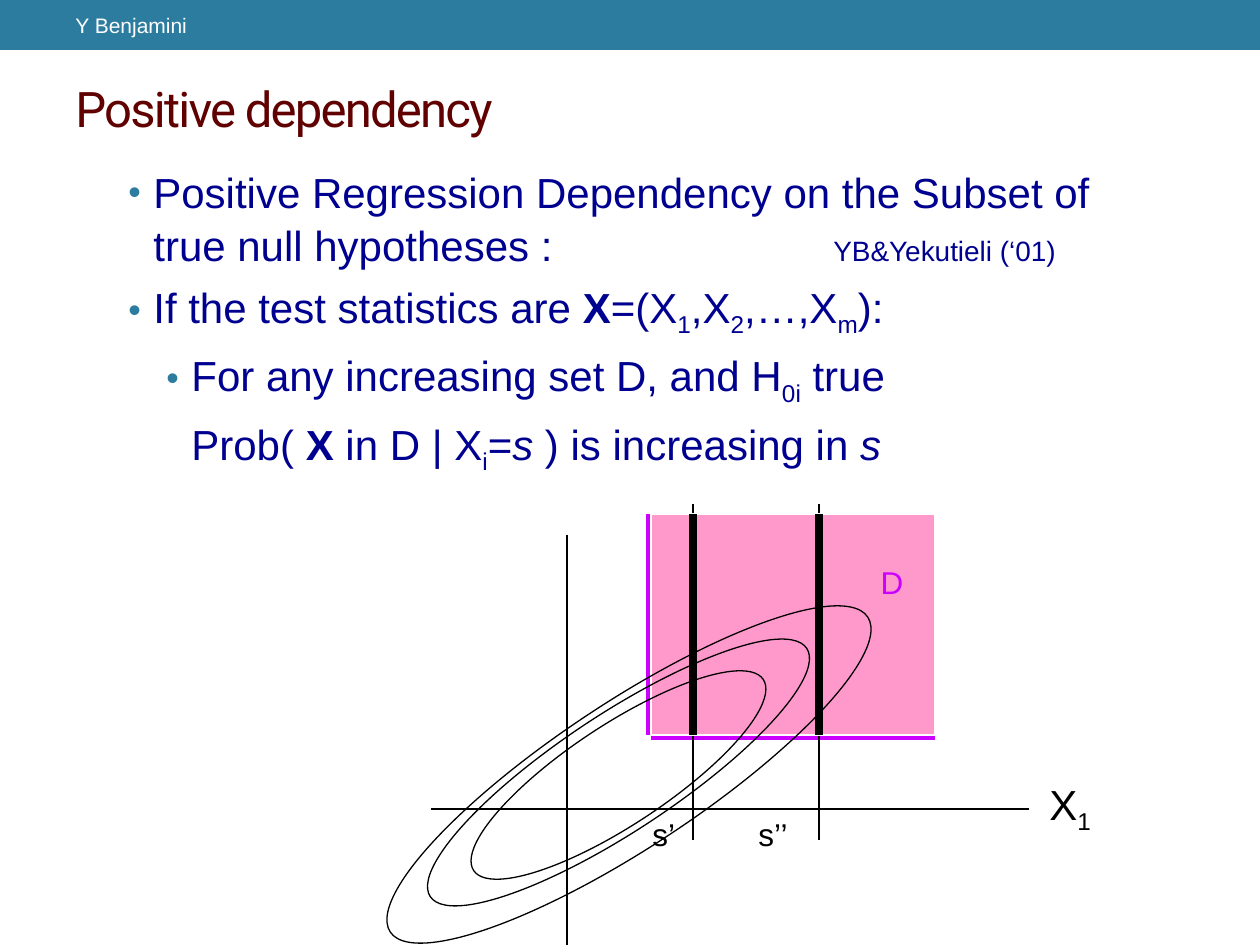
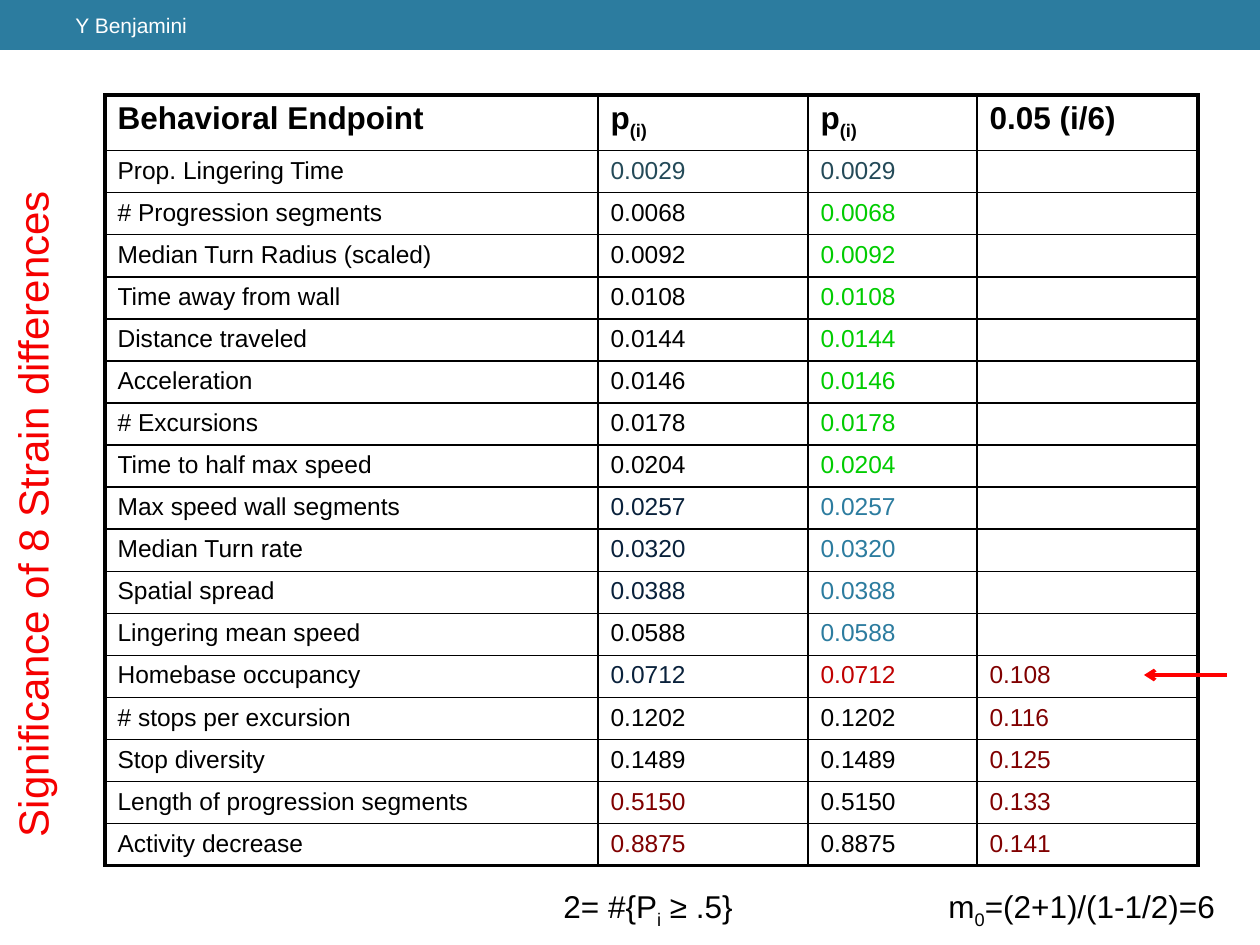
from lxml import etree
from pptx import Presentation
from pptx.dml.color import RGBColor
from pptx.enum.shapes import MSO_CONNECTOR, MSO_SHAPE
from pptx.enum.text import MSO_ANCHOR, PP_ALIGN
from pptx.oxml.ns import qn
from pptx.util import Pt

RECTANGLE, ELLIPSE = MSO_SHAPE.RECTANGLE, MSO_SHAPE.OVAL
STRAIGHT = MSO_CONNECTOR.STRAIGHT
MIDDLE, TOP = MSO_ANCHOR.MIDDLE, MSO_ANCHOR.TOP
LEFT, CENTER = PP_ALIGN.LEFT, PP_ALIGN.CENTER

PX = 914400 / 126
PAGE_WIDTH, PAGE_HEIGHT = 1260, 945
BODY_FONT, TITLE_FONT = "Arial", "Roboto"
COLORS = {
    "black": "000000", "white": "FFFFFF", "teal": "2C7C9F", "slate": "244A58",
    "night": "09213B", "navy": "000090", "maroon": "600000", "wine": "800000",
    "crimson": "C00000", "green": "00CC00", "red": "FF0000", "scarlet": "F50000",
    "violet": "CC00FF", "pink": "FF99CC",
}

AUTHOR = "Y Benjamini"
TITLE = "Positive dependency"
BULLETS = [
    (25, True, [("Positive Regression Dependency on the Subset of true null hypotheses :\t", ""),
                ("YB&Yekutieli (‘01)", "small")]),
    (25, True, [("If the test statistics are ", ""), ("X", "bold"), ("=(X", ""), ("1", "sub"),
                (",X", ""), ("2", "sub"), (",…,X", ""), ("m", "sub"), ("):", "")]),
    (63, True, [("For any increasing set D, and H", ""), ("0i", "sub"), (" true", "")]),
    (63, False, [("Prob( ", ""), ("X", "bold"), (" in D | X", ""), ("i", "sub"), ("=", ""),
                 ("s", "italic"), (" ) is increasing in ", ""), ("s", "italic")]),
]
BULLET_HANG = 25
CITATION_TAB = 705

AXES = [(567, 535, 567, 945), (431, 809, 1029, 809)]
SET_D = (651, 514, 284, 221)
CUT_XS = [693, 819]
CUT_TOP, CUT_BOTTOM = 504, 840
CONTOURS = [(393, 714, 451, 117), (445, 725, 347, 100), (343, 702, 572, 145)]
CONTOUR_TILT = 326.6
CUT_LABELS = [("s’", (640, 809, 63, 76)), ("s’’", (746, 809, 86, 76))]

P_HEADER = [("p", ""), ("(i)", "sub")]
HEADER = [[("Behavioral Endpoint", "")], P_HEADER, P_HEADER, [("0.05 (i/6)", "")]]
ENDPOINTS = [
    ("Prop. Lingering Time", "0.0029", "slate", "slate", ""),
    ("# Progression segments", "0.0068", "black", "green", ""),
    ("Median Turn Radius (scaled)", "0.0092", "black", "green", ""),
    ("Time away from wall", "0.0108", "black", "green", ""),
    ("Distance traveled", "0.0144", "black", "green", ""),
    ("Acceleration", "0.0146", "black", "green", ""),
    ("# Excursions", "0.0178", "black", "green", ""),
    ("Time to half max speed", "0.0204", "black", "green", ""),
    ("Max speed wall segments", "0.0257", "night", "teal", ""),
    ("Median Turn rate", "0.0320", "night", "teal", ""),
    ("Spatial spread", "0.0388", "night", "teal", ""),
    ("Lingering mean speed", "0.0588", "black", "teal", ""),
    ("Homebase occupancy", "0.0712", "night", "crimson", "0.108"),
    ("# stops per excursion", "0.1202", "black", "black", "0.116"),
    ("Stop diversity", "0.1489", "black", "black", "0.125"),
    ("Length of progression segments", "0.5150", "wine", "black", "0.133"),
    ("Activity decrease", "0.8875", "wine", "black", "0.141"),
]
COLUMN_WIDTHS = [493, 210, 169, 221]
HEADER_HEIGHT, ROW_HEIGHT = 52, 42
TABLE_LEFT, TABLE_TOP = 105, 95
SIDE_TITLE = "Significance of 8 Strain differences"
FORMULAS = [
    ([("2= #{P", ""), ("i", "sub"), (" ≥ .5}", "")], (551, 881, 210, 50), True),
    ([("m", ""), ("0", "sub"), ("=(2+1)/(1-1/2)=6", "")], (936, 881, 302, 50), False),
]


def emu(*lengths):
    return [round(length * PX) for length in lengths]


def rgb(name):
    return RGBColor.from_string(COLORS[name])


def write(para, spans, size, color, font=BODY_FONT, bold=False):
    for text, style in spans:
        span = para.add_run()
        span.text = text
        span.font.name = font
        span.font.size = Pt(16 if style == "small" else size)
        span.font.color.rgb = rgb(color)
        span.font.bold = bold or style == "bold"
        span.font.italic = style == "italic"
        if style == "sub":
            span.font._element.set("baseline", "-25000")


def add_text(page, spans, place, size, color, wrap=True, anchor=TOP, align=LEFT, font=BODY_FONT):
    box = page.shapes.add_textbox(*emu(*place))
    box.text_frame.word_wrap = wrap
    box.text_frame.vertical_anchor = anchor
    para = box.text_frame.paragraphs[0]
    para.alignment = align
    write(para, spans, size, color, font)
    return box


def add_shape(page, kind, place, fill=None, line=None):
    shape = page.shapes.add_shape(kind, *emu(*place))
    shape.shadow.inherit = False
    if fill:
        shape.fill.solid()
        shape.fill.fore_color.rgb = rgb(fill)
    else:
        shape.fill.background()
    if line:
        shape.line.color.rgb = rgb(line)
        shape.line.width = Pt(0.75)
    else:
        shape.line.fill.background()
    return shape


def add_line(page, ends, color="black", width=0.75):
    line = page.shapes.add_connector(STRAIGHT, *emu(*ends))
    line.line.color.rgb = rgb(color)
    line.line.width = Pt(width)
    etree.SubElement(line._element.spPr, qn("a:effectLst"))
    return line


def add_page(deck):
    page = deck.slides.add_slide(deck.slide_layouts[6])
    add_shape(page, RECTANGLE, (0, 0, PAGE_WIDTH, 50), "teal")
    add_text(page, [(AUTHOR, "")], (63, 3, 399, 45), 12, "white", anchor=MIDDLE)
    return page


def add_bullets(page):
    box = page.shapes.add_textbox(*emu(116, 158, 1040, 388))
    frame = box.text_frame
    frame.word_wrap = True
    for index, (margin, marked, spans) in enumerate(BULLETS):
        para = frame.paragraphs[0] if index == 0 else frame.add_paragraph()
        para.line_spacing = 1.05
        para.space_before = Pt(4.8)
        write(para, spans, 24, "navy")
        props = para._p.get_or_add_pPr()
        props.set("marL", str(emu(margin)[0]))
        props.set("indent", str(-emu(BULLET_HANG)[0] if marked else 0))
        if marked:
            tint = etree.SubElement(props, qn("a:buClr"))
            etree.SubElement(tint, qn("a:srgbClr"), val=COLORS["teal"])
            etree.SubElement(props, qn("a:buSzPct"), val="85000")
            etree.SubElement(props, qn("a:buFont"), typeface=BODY_FONT)
            etree.SubElement(props, qn("a:buChar"), char="•")
        if index == 0:
            tabs = etree.SubElement(props, qn("a:tabLst"))
            etree.SubElement(tabs, qn("a:tab"), pos=str(emu(CITATION_TAB)[0]), algn="l")


def add_diagram(page):
    left, top, width, height = SET_D
    right, bottom = left + width, top + height
    for ends in AXES:
        add_line(page, ends)
    for text, place in CUT_LABELS:
        add_text(page, [(text, "")], place, 18, "black", wrap=False)
    add_line(page, (right, bottom, left, bottom), "violet", 6)
    add_line(page, (left, bottom, left, top), "violet", 6)
    for x in CUT_XS:
        add_line(page, (x, CUT_TOP, x, CUT_BOTTOM))
    add_shape(page, RECTANGLE, SET_D, "pink", "white")
    add_text(page, [("D", "")], (851, 557, 82, 76), 18, "violet", wrap=False, align=CENTER)
    for x in CUT_XS:
        add_line(page, (x, bottom, x, top), width=4.5)
    for place in CONTOURS:
        add_shape(page, ELLIPSE, place, line="black").rotation = CONTOUR_TILT
    add_text(page, [("X", ""), ("1", "sub")], (1037, 772, 69, 63), 24, "black", wrap=False)


def set_borders(cell, widths):
    props = cell._tc.get_or_add_tcPr()
    for position, (side, width) in enumerate(widths.items()):
        edge = etree.Element(qn(f"a:{side}"), w=str(Pt(width)))
        fill = etree.SubElement(edge, qn("a:solidFill"))
        etree.SubElement(fill, qn("a:srgbClr"), val=COLORS["black"])
        props.insert(position, edge)


def add_endpoint_table(page):
    rows = [[(spans, "black") for spans in HEADER]]
    for name, value, first, second, limit in ENDPOINTS:
        texts = [(name, "black"), (value, first), (value, second), (limit, "wine")]
        rows.append([([(text, "")] if text else [], color) for text, color in texts])
    heights = [HEADER_HEIGHT] + [ROW_HEIGHT] * len(ENDPOINTS)
    place = (TABLE_LEFT, TABLE_TOP, sum(COLUMN_WIDTHS), sum(heights))
    table = page.shapes.add_table(len(rows), len(COLUMN_WIDTHS), *emu(*place)).table
    table.first_row = table.horz_banding = False
    for column, width in zip(table.columns, emu(*COLUMN_WIDTHS)):
        column.width = width
    last_row, last_column = len(rows) - 1, len(COLUMN_WIDTHS) - 1
    for r, (row, height) in enumerate(zip(rows, emu(*heights))):
        table.rows[r].height = height
        for c, (spans, color) in enumerate(row):
            cell = table.cell(r, c)
            cell.fill.background()
            para = cell.text_frame.paragraphs[0]
            write(para, spans, 14 if r else 18, color, bold=r == 0)
            if not spans:
                etree.SubElement(para._p, qn("a:endParaRPr"), sz="1400")
            outer = {"lnL": c == 0, "lnR": c == last_column, "lnT": r == 0, "lnB": r == last_row}
            set_borders(cell, {side: 2.25 if edge else 1 for side, edge in outer.items()})


def main():
    deck = Presentation()
    deck.slide_width, deck.slide_height = emu(PAGE_WIDTH, PAGE_HEIGHT)

    page = add_page(deck)
    title = add_text(page, [(TITLE, "")], (63, 73, 1134, 69), 28, "maroon",
                     anchor=MIDDLE, font=TITLE_FONT)
    title.text_frame.paragraphs[0].runs[0].font._element.set("spc", "-100")
    add_bullets(page)
    add_diagram(page)

    page = add_page(deck)
    add_endpoint_table(page)
    add_text(page, [(SIDE_TITLE, "")], (-363, 423, 790, 63), 24, "scarlet").rotation = 270
    for spans, place, wrap in FORMULAS:
        add_text(page, spans, place, 18, "black", wrap=wrap)
    arrow = add_line(page, (1227, 675, 1144, 675), "red", 2.08)
    etree.SubElement(arrow.line._get_or_add_ln(), qn("a:tailEnd"), type="arrow")

    deck.save("out.pptx")


if __name__ == "__main__":
    main()
